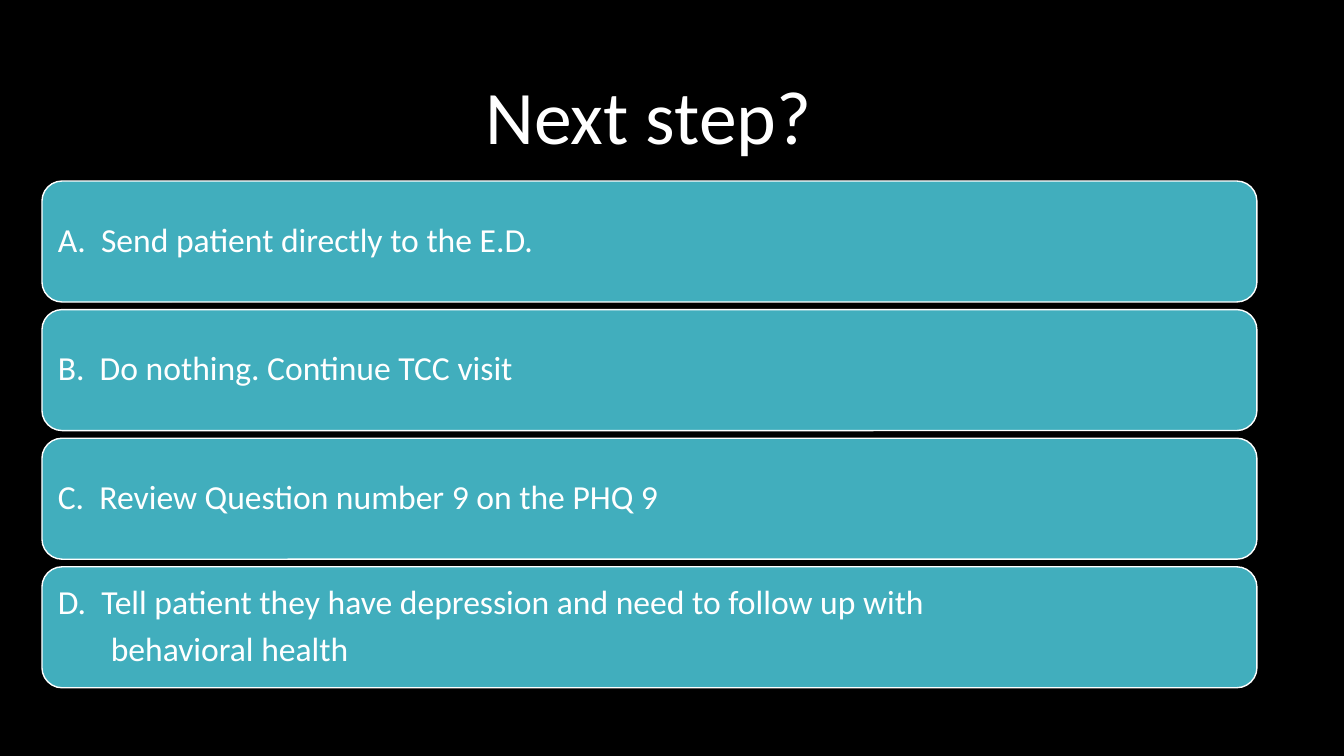
from pptx import Presentation
from pptx.dml.color import RGBColor
from pptx.enum.shapes import MSO_SHAPE
from pptx.enum.text import MSO_ANCHOR, PP_ALIGN
from pptx.util import Emu, Pt

THEME = {
    "background": RGBColor(0x00, 0x00, 0x00),
    "card": RGBColor(0x41, 0xAE, 0xBD),
    "text": RGBColor(0xFF, 0xFF, 0xFF),
    "font": "Calibri",
    "title_size": 54,
    "option_size": 24,
}
OPTIONS = [
    ["A.  Send patient directly to the E.D."],
    ["B.  Do nothing. Continue TCC visit"],
    ["C.  Review Question number 9 on the PHQ 9"],
    ["D.  Tell patient they have depression and need to follow up with",
     "behavioral health"],
]
CARD_LEFT, CARD_TOP, CARD_WIDTH, CARD_HEIGHT = 42, 181, 1215, 121
CARD_PITCH = 128.6
CONTINUATION_INDENT = 53


def px(length):
    return Emu(round(length * 914400 / 100.8))


def write_text(shape, lines, size, align=PP_ALIGN.LEFT, inset=10, gap=0, indent=0):
    """Write one paragraph per line; later lines get the gap and indent."""
    frame = shape.text_frame
    frame.word_wrap = True
    frame.vertical_anchor = MSO_ANCHOR.MIDDLE
    frame.margin_left = frame.margin_right = px(inset)
    frame.margin_top = frame.margin_bottom = px(inset)
    for index, line in enumerate(lines):
        paragraph = frame.add_paragraph() if index else frame.paragraphs[0]
        paragraph.alignment = align
        paragraph.line_spacing = 0.9
        if index:
            paragraph.space_before = Pt(gap)
            paragraph._p.get_or_add_pPr().set("marL", str(px(indent)))
        run = paragraph.add_run()
        run.text = line
        run.font.name = THEME["font"]
        run.font.size = Pt(size)
        run.font.color.rgb = THEME["text"]


presentation = Presentation()
presentation.slide_width, presentation.slide_height = px(1344), px(756)
slide = presentation.slides.add_slide(presentation.slide_layouts[5])
slide.background.fill.solid()
slide.background.fill.fore_color.rgb = THEME["background"]

title = slide.shapes.title
title.left, title.top, title.width, title.height = px(69), px(47), px(1159), px(146)
write_text(title, ["Next step?"], THEME["title_size"], align=PP_ALIGN.CENTER)

for row, lines in enumerate(OPTIONS):
    card = slide.shapes.add_shape(
        MSO_SHAPE.ROUNDED_RECTANGLE, px(CARD_LEFT), px(CARD_TOP + row * CARD_PITCH),
        px(CARD_WIDTH), px(CARD_HEIGHT))
    card.shadow.inherit = False
    card.fill.solid()
    card.fill.fore_color.rgb = THEME["card"]
    card.line.color.rgb = THEME["text"]
    card.line.width = Pt(1)
    write_text(card, lines, THEME["option_size"], gap=8, indent=CONTINUATION_INDENT)

presentation.save("out.pptx")
